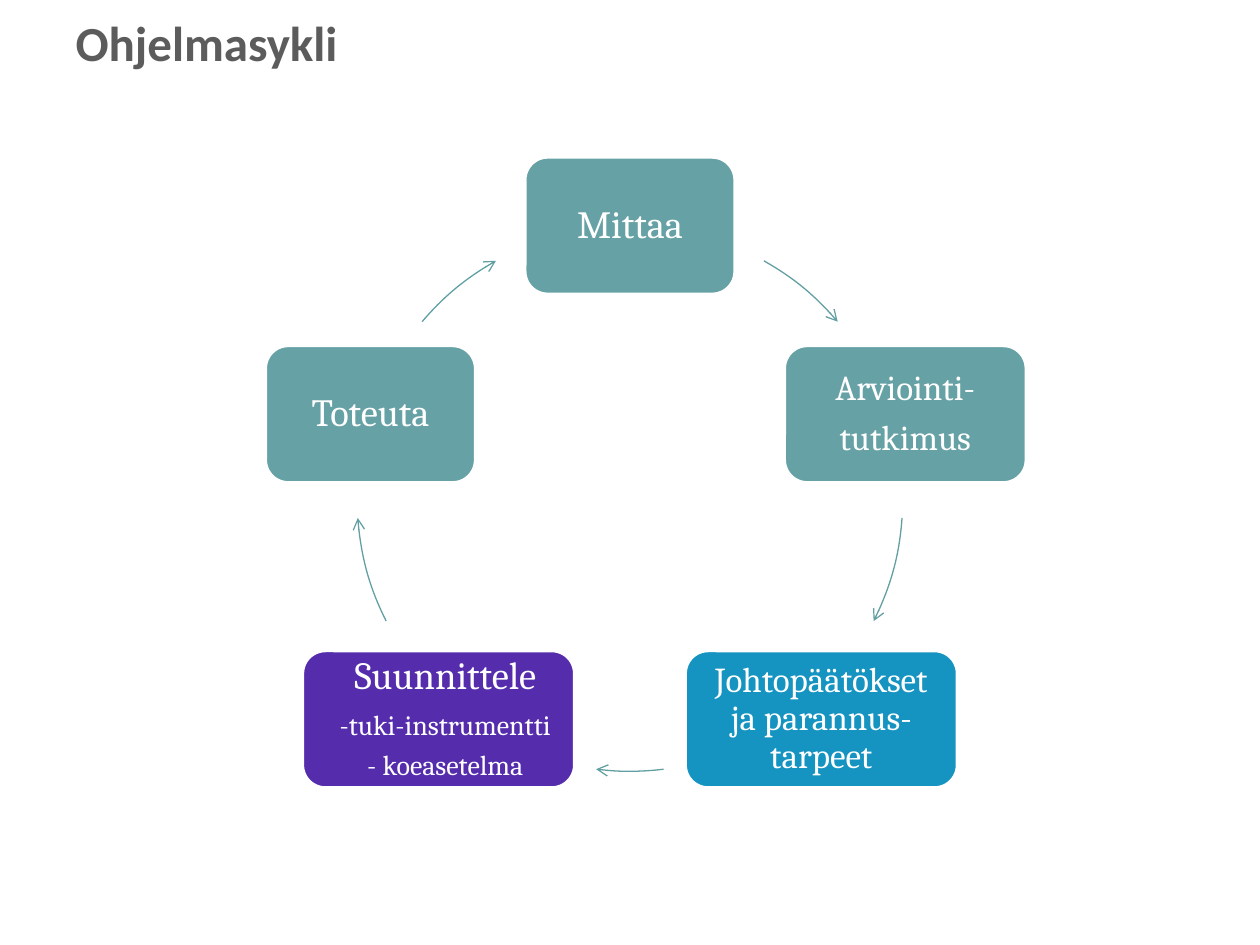
import math

from lxml import etree
from pptx import Presentation
from pptx.dml.color import RGBColor
from pptx.enum.shapes import MSO_SHAPE
from pptx.enum.text import MSO_ANCHOR, PP_ALIGN
from pptx.oxml.ns import qn
from pptx.util import Cm, Pt

ROUNDED, ARC = MSO_SHAPE.ROUNDED_RECTANGLE, MSO_SHAPE.ARC
TOP, MIDDLE = MSO_ANCHOR.TOP, MSO_ANCHOR.MIDDLE
LEFT, CENTER = PP_ALIGN.LEFT, PP_ALIGN.CENTER

WHITE = RGBColor(0xFF, 0xFF, 0xFF)
GREY = RGBColor(0x5C, 0x5C, 0x5C)
TEAL = RGBColor(0x66, 0xA1, 0xA5)
ARROW_TEAL = RGBColor(0x62, 0x9F, 0xA3)
BLUE = RGBColor(0x16, 0x94, 0xC1)
PURPLE = RGBColor(0x55, 0x2D, 0xAC)

STEP_WIDTH, STEP_HEIGHT = 4.24, 2.77
INSET = 0.23

# Clockwise from the top: fill, width, left inset, side that grows, (text, size) lines
STEPS = [
    (TEAL, STEP_WIDTH, INSET, "right", [("Mittaa", 22)]),
    (TEAL, 4.88, INSET, "right", [("Arviointi-", 20), ("tutkimus", 20)]),
    (BLUE, 5.49, INSET, "right", [("Johtopäätökset ja parannus-tarpeet", 20)]),
    (PURPLE, 5.49, 0.5, "left",
     [("Suunnittele", 22), ("-tuki-instrumentti", 16), ("- koeasetelma", 16)]),
    (TEAL, STEP_WIDTH, INSET, "right", [("Toteuta", 22)]),
]
# Start and end in degrees, clockwise from the right
ARROW_ANGLES = [(299.4, 319.6), (4.1, 26.7), (82.9, 97.1),
                (153.3, 175.9), (220.4, 240.6)]


def set_format(target, values):
    for name, value in values.items():
        setattr(target, name, value)


def set_font(font, color, **values):
    set_format(font, values)
    font.color.rgb = color


def add_title(slide, left, top, width, height):
    title = slide.shapes.title
    set_format(title, {"left": Cm(left), "top": Cm(top),
                       "width": Cm(width), "height": Cm(height)})
    title.text_frame.text = "Ohjelmasykli"
    title.text_frame.vertical_anchor = TOP
    paragraph = title.text_frame.paragraphs[0]
    paragraph.alignment = LEFT
    set_font(paragraph.font, GREY, name="Calibri", size=Pt(28), bold=True)


def add_step(slide, left, top, width, fill, left_inset, lines):
    step = slide.shapes.add_shape(ROUNDED, Cm(left), Cm(top),
                                  Cm(width), Cm(STEP_HEIGHT))
    step.shadow.inherit = False
    step.fill.solid()
    step.fill.fore_color.rgb = fill
    step.line.color.rgb = WHITE
    step.line.width = Pt(2)
    frame = step.text_frame
    set_format(frame, {
        "word_wrap": True, "vertical_anchor": MIDDLE,
        "margin_left": Cm(left_inset), "margin_right": Cm(INSET),
        "margin_top": Cm(INSET), "margin_bottom": Cm(INSET),
    })
    for index, (text, size) in enumerate(lines):
        paragraph = frame.add_paragraph() if index else frame.paragraphs[0]
        paragraph.text = text
        set_format(paragraph, {"alignment": CENTER, "line_spacing": 0.9,
                               "space_after": Pt(0.35 * size)})
        set_font(paragraph.font, WHITE, name="Cambria", size=Pt(size))


def add_arc_arrow(slide, left, top, diameter, start, end):
    arrow = slide.shapes.add_shape(ARC, Cm(left), Cm(top),
                                   Cm(diameter), Cm(diameter))
    arrow.shadow.inherit = False
    arrow.fill.background()
    # Angles are stored in 60000ths of a degree, adjustments in 100000ths
    for index, angle in enumerate((start, end)):
        arrow.adjustments[index] = angle * 0.6
    arrow.line.color.rgb = ARROW_TEAL
    arrow.line.width = Pt(0.75)
    etree.SubElement(arrow.line._get_or_add_ln(), qn("a:tailEnd"), type="arrow")


def add_cycle(slide, left, top, diameter):
    """Centre the steps on the circle that fills the given square."""
    radius = diameter / 2
    for index, (fill, width, left_inset, growth, lines) in enumerate(STEPS):
        angle = math.radians(360 / len(STEPS) * index - 90)
        step_left = left + radius * (1 + math.cos(angle)) - STEP_WIDTH / 2
        step_top = top + radius * (1 + math.sin(angle)) - STEP_HEIGHT / 2
        if growth == "left":
            step_left -= width - STEP_WIDTH
        add_step(slide, step_left, step_top, width, fill, left_inset, lines)
    for start, end in ARROW_ANGLES:
        add_arc_arrow(slide, left, top, diameter, start, end)


def main():
    presentation = Presentation()
    presentation.slide_width, presentation.slide_height = Cm(25.4), Cm(19.05)
    slide = presentation.slides.add_slide(presentation.slide_layouts[5])
    add_title(slide, 1.27, 0.13, 22.86, 2.59)
    add_cycle(slide, 7.2, 4.55, 11)
    presentation.save("out.pptx")


if __name__ == "__main__":
    main()
